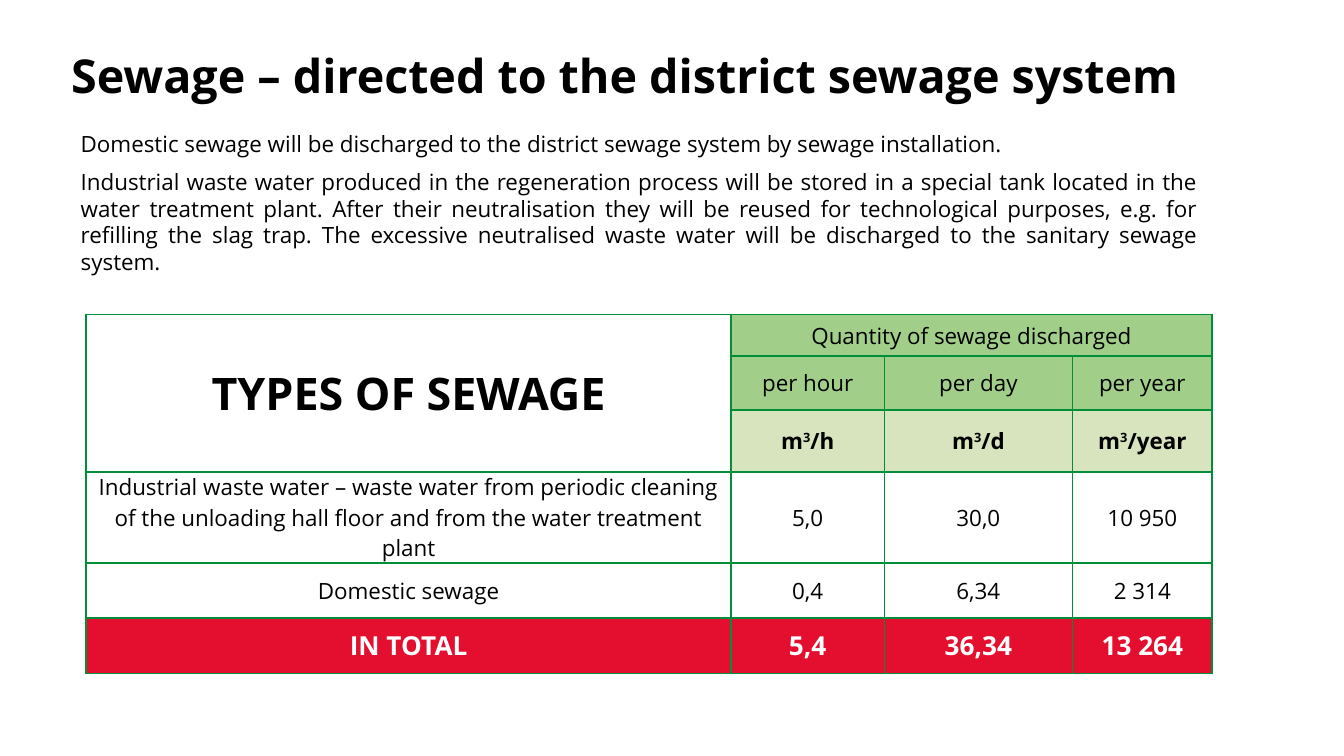
import dataclasses

import pptx
import pptx.dml.color
import pptx.enum.text
import pptx.oxml.ns
import pptx.util
from lxml import etree

Inches = pptx.util.Inches
Pt = pptx.util.Pt
Align = pptx.enum.text.PP_ALIGN
Anchor = pptx.enum.text.MSO_ANCHOR
qn = pptx.oxml.ns.qn


@dataclasses.dataclass(frozen=True)
class Theme:
    font: str = "Open Sans"
    black: str = "000000"
    white: str = "FFFFFF"
    border: str = "008F38"
    header: str = "A1CE88"
    unit: str = "D7E4BD"
    total: str = "E40E2E"
    title_size: int = 25
    heading_size: int = 24
    total_size: int = 14
    text_size: int = 12
    body_line: float = 14.3
    border_width: int = 1


THEME = Theme()


@dataclasses.dataclass(frozen=True)
class CellStyle:
    fill: str | None = None
    size: int = THEME.text_size
    color: str = THEME.black
    bold: bool = False


PLAIN = CellStyle()
HEADING = CellStyle(size=THEME.heading_size, bold=True)
HEADER = CellStyle(fill=THEME.header)
UNIT = CellStyle(fill=THEME.unit, bold=True)
TOTAL = CellStyle(THEME.total, THEME.total_size, THEME.white, True)


@dataclasses.dataclass(frozen=True)
class TableRow:
    height: float
    texts: tuple[str, str, str, str]
    style: CellStyle


TITLE = "Sewage – directed to the district sewage system"
BODY = (
    "Domestic sewage will be discharged to the district sewage system by sewage installation.",
    "Industrial waste water produced in the regeneration process will be stored in a special tank "
    "located in the water treatment plant. After their neutralisation they will be reused for "
    "technological purposes, e.g. for refilling the slag trap. The excessive neutralised waste "
    "water will be discharged to the sanitary sewage system.",
)
COLUMN_WIDTHS = (4.8, 1.14, 1.4, 1.04)
ROWS = (
    TableRow(0.31, ("TYPES OF SEWAGE", "Quantity of sewage discharged", "", ""), HEADER),
    TableRow(0.4, ("", "per hour", "per day", "per year"), HEADER),
    TableRow(0.46, ("", "m³/h", "m³/d", "m³/year"), UNIT),
    TableRow(
        0.68,
        (
            "Industrial waste water – waste water from periodic cleaning of the unloading hall "
            "floor and from the water treatment plant",
            "5,0", "30,0", "10 950",
        ),
        PLAIN,
    ),
    TableRow(0.41, ("Domestic sewage", "0,4", "6,34", "2 314"), PLAIN),
    TableRow(0.41, ("IN TOTAL", "5,4", "36,34", "13 264"), TOTAL),
)
HEADING_ROWS = 3


def set_font(paragraph, size: int, color: str = THEME.black, bold: bool = False) -> None:
    font = paragraph.font
    font.name = THEME.font
    font.size = Pt(size)
    font.bold = bold
    font.color.rgb = pptx.dml.color.RGBColor.from_string(color)


def place(shape, left: float, top: float, width: float, height: float) -> None:
    shape.left, shape.top = Inches(left), Inches(top)
    shape.width, shape.height = Inches(width), Inches(height)


def write_title(shape) -> None:
    place(shape, 0.43, 0.29, 9, 0.53)
    frame = shape.text_frame
    frame.text = TITLE
    frame.auto_size = pptx.enum.text.MSO_AUTO_SIZE.NONE
    frame.vertical_anchor = Anchor.MIDDLE
    paragraph = frame.paragraphs[0]
    paragraph.alignment = Align.LEFT
    set_font(paragraph, THEME.title_size, bold=True)


def write_body(shape) -> None:
    place(shape, 0.5, 0.92, 8.52, 1.11)
    frame = shape.text_frame
    frame.text = "\n".join(BODY)
    frame.auto_size = pptx.enum.text.MSO_AUTO_SIZE.NONE
    for paragraph in frame.paragraphs:
        paragraph.alignment = Align.JUSTIFY
        paragraph.line_spacing = Pt(THEME.body_line)
        paragraph.space_before = Pt(0)
        properties = paragraph._p.get_or_add_pPr()
        properties.set("marL", "0")
        properties.set("indent", "0")
        etree.SubElement(properties, qn("a:buNone"))
        set_font(paragraph, THEME.text_size)
    frame.paragraphs[0].space_after = Pt(6)


def add_borders(cell) -> None:
    properties = cell._tc.get_or_add_tcPr()
    for side in ("lnL", "lnR", "lnT", "lnB"):
        line = etree.SubElement(properties, qn(f"a:{side}"), w=str(Pt(THEME.border_width)))
        fill = etree.SubElement(line, qn("a:solidFill"))
        etree.SubElement(fill, qn("a:srgbClr"), val=THEME.border)


def write_cell(cell, text: str, style: CellStyle) -> None:
    cell.margin_left = cell.margin_right = Inches(0.02)
    cell.margin_top = cell.margin_bottom = 0
    cell.vertical_anchor = Anchor.MIDDLE
    add_borders(cell)
    if style.fill:
        cell.fill.solid()
        cell.fill.fore_color.rgb = pptx.dml.color.RGBColor.from_string(style.fill)
    else:
        cell.fill.background()
    paragraph = cell.text_frame.paragraphs[0]
    paragraph.alignment = Align.CENTER
    set_font(paragraph, style.size, style.color, style.bold)
    for part in filter(None, text.partition("³")):
        run = paragraph.add_run()
        run.text = part
        if part == "³":
            run.text = "3"
            run._r.get_or_add_rPr().set("baseline", "30000")


def add_sewage_table(slide) -> None:
    table = slide.shapes.add_table(
        len(ROWS), len(COLUMN_WIDTHS), Inches(0.64), Inches(2.34),
        Inches(sum(COLUMN_WIDTHS)), Inches(sum(row.height for row in ROWS)),
    ).table
    table.first_row = table.horz_banding = False
    for column, width in zip(table.columns, COLUMN_WIDTHS):
        column.width = Inches(width)
    for row_index, row in enumerate(ROWS):
        table.rows[row_index].height = Inches(row.height)
        for column_index, text in enumerate(row.texts):
            is_heading = row_index < HEADING_ROWS and column_index == 0
            write_cell(table.cell(row_index, column_index), text, HEADING if is_heading else row.style)
    table.cell(0, 0).merge(table.cell(HEADING_ROWS - 1, 0))
    table.cell(0, 1).merge(table.cell(0, len(COLUMN_WIDTHS) - 1))


def main() -> None:
    presentation = pptx.Presentation()
    presentation.slide_width = Inches(10)
    presentation.slide_height = presentation.slide_width * 9 // 16
    slide = presentation.slides.add_slide(presentation.slide_layouts[1])
    write_title(slide.shapes.title)
    write_body(slide.placeholders[1])
    add_sewage_table(slide)
    presentation.save("out.pptx")


if __name__ == "__main__":
    main()
